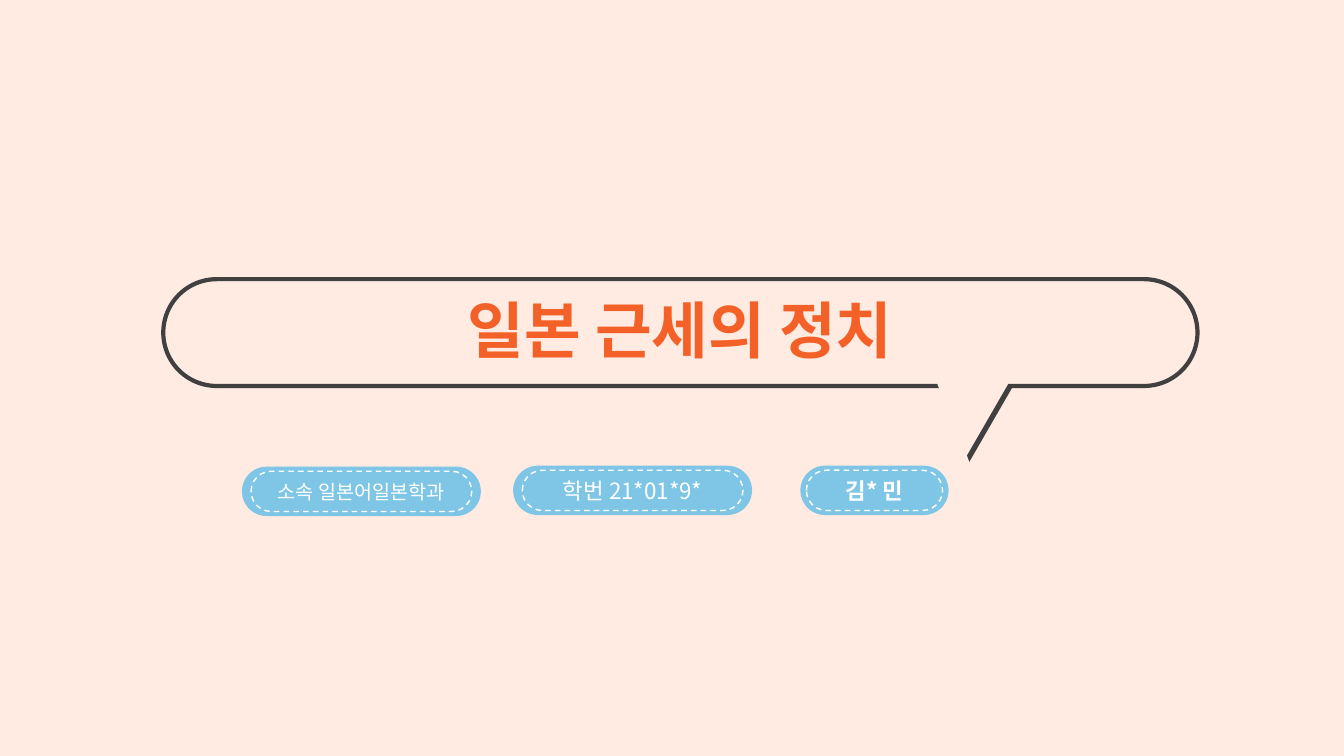
from dataclasses import dataclass

from lxml.etree import SubElement
from pptx import Presentation
from pptx.dml.color import RGBColor
from pptx.enum.dml import MSO_LINE
from pptx.enum.shapes import MSO_SHAPE
from pptx.enum.text import MSO_ANCHOR, MSO_AUTO_SIZE, PP_ALIGN
from pptx.oxml.ns import qn
from pptx.shapes.autoshape import Shape
from pptx.slide import Slide
from pptx.text.text import TextFrame
from pptx.util import Inches, Pt

WIDTH, HEIGHT = Inches(13.333), Inches(7.5)
FONT = "Noto Sans CJK KR"
CREAM, CHARCOAL, ORANGE, BLUE, WHITE = "FFEBE2", "404040", "F46128", "7FC6E6", "FFFFFF"


@dataclass(frozen=True)
class Box:
    """A rectangle in percent of the slide's width and height."""

    left: float
    top: float
    width: float
    height: float

    def inset(self, across: float, down: float) -> "Box":
        """Return the box shrunk on every side."""
        return Box(self.left + across, self.top + down,
                   self.width - 2 * across, self.height - 2 * down)

    def lengths(self) -> tuple[int, int, int, int]:
        """Return left, top, width and height as slide lengths."""
        return (round(WIDTH * self.left / 100), round(HEIGHT * self.top / 100),
                round(WIDTH * self.width / 100), round(HEIGHT * self.height / 100))


@dataclass(frozen=True)
class Badge:
    """A labelled pill with a stitched border."""

    text: str
    box: Box
    stitch_inset: float
    size: int = 16
    bold: bool = False


BADGES = (
    Badge("소속 일본어일본학과", Box(18, 61.73, 17.78, 6.53), 0.68, size=14),
    Badge("학번 21*01*9*", Box(38.18, 61.6, 17.78, 6.53), 0.68),
    Badge("김* 민", Box(59.55, 61.6, 11.03, 6.53), 0.45, bold=True),
)


def color(value: str) -> RGBColor:
    """Turn a hex string into a colour."""
    return RGBColor.from_string(value)


def add_form(slide: Slide, kind: MSO_SHAPE, box: Box, adjustment: float,
             fill: str | None = None, line: str | None = None,
             line_width: float = 1) -> Shape:
    """Draw a preset shape without a shadow."""
    shape = slide.shapes.add_shape(kind, *box.lengths())
    shape.shadow.inherit = False
    shape.adjustments[0] = adjustment
    if fill:
        shape.fill.solid()
        shape.fill.fore_color.rgb = color(fill)
    else:
        shape.fill.background()
    if line:
        shape.line.color.rgb = color(line)
        shape.line.width = Pt(line_width)
    else:
        shape.line.fill.background()
    return shape


def write(frame: TextFrame, text: str, size: int, ink: str, bold: bool) -> None:
    """Write one centred run."""
    paragraph = frame.paragraphs[0]
    paragraph.alignment = PP_ALIGN.CENTER
    run = paragraph.add_run()
    run.text = text
    run.font.size, run.font.bold, run.font.name = Pt(size), bold, FONT
    run.font.color.rgb = color(ink)
    SubElement(run.font._element, qn("a:ea"), typeface=FONT)


def add_bubble(slide: Slide) -> None:
    """Draw the speech bubble and its tail, edged by a hard shadow."""
    add_form(slide, MSO_SHAPE.ROUNDED_RECTANGLE, Box(12.15, 36.93, 76.95, 14.13), 0.5,
             CREAM, CHARCOAL, 3)
    tail = add_form(slide, MSO_SHAPE.ISOSCELES_TRIANGLE, Box(66.15, 46.53, 7.8, 11.33), 0, CREAM)
    tail.rotation = 210
    effects = tail.element.spPr.find(qn("a:effectLst"))
    shadow = SubElement(effects, qn("a:outerShdw"), blurRad="0", dist=str(Pt(4)),
                        dir=str(45 * 60000), algn="tl", rotWithShape="0")
    SubElement(shadow, qn("a:srgbClr"), val=CHARCOAL)


def place_title(slide: Slide, text: str) -> None:
    """Format the title and bring it in front of the bubble."""
    title = slide.shapes.title
    title.left, title.top, title.width, title.height = Box(32.03, 38, 37.2, 11.2).lengths()
    frame = title.text_frame
    frame.word_wrap = False
    frame.auto_size = MSO_AUTO_SIZE.SHAPE_TO_FIT_TEXT
    frame.vertical_anchor = MSO_ANCHOR.TOP
    write(frame, text, 44, ORANGE, True)
    title.element.getparent().append(title.element)


def add_badge(slide: Slide, badge: Badge) -> None:
    """Draw a badge and its stitching."""
    pill = add_form(slide, MSO_SHAPE.ROUNDED_RECTANGLE, badge.box, 0.5, BLUE)
    pill.text_frame.vertical_anchor = MSO_ANCHOR.MIDDLE
    write(pill.text_frame, badge.text, badge.size, WHITE, badge.bold)
    stitching = add_form(slide, MSO_SHAPE.ROUNDED_RECTANGLE,
                         badge.box.inset(badge.stitch_inset, 0.6), 0.5, line=WHITE)
    stitching.line.dash_style = MSO_LINE.DASH


def main() -> None:
    """Build and save the cover slide."""
    presentation = Presentation()
    presentation.slide_width, presentation.slide_height = WIDTH, HEIGHT
    slide = presentation.slides.add_slide(presentation.slide_layouts[5])
    slide.background.fill.solid()
    slide.background.fill.fore_color.rgb = color(CREAM)
    add_bubble(slide)
    place_title(slide, "일본 근세의 정치")
    for badge in BADGES:
        add_badge(slide, badge)
    presentation.save("out.pptx")


if __name__ == "__main__":
    main()
